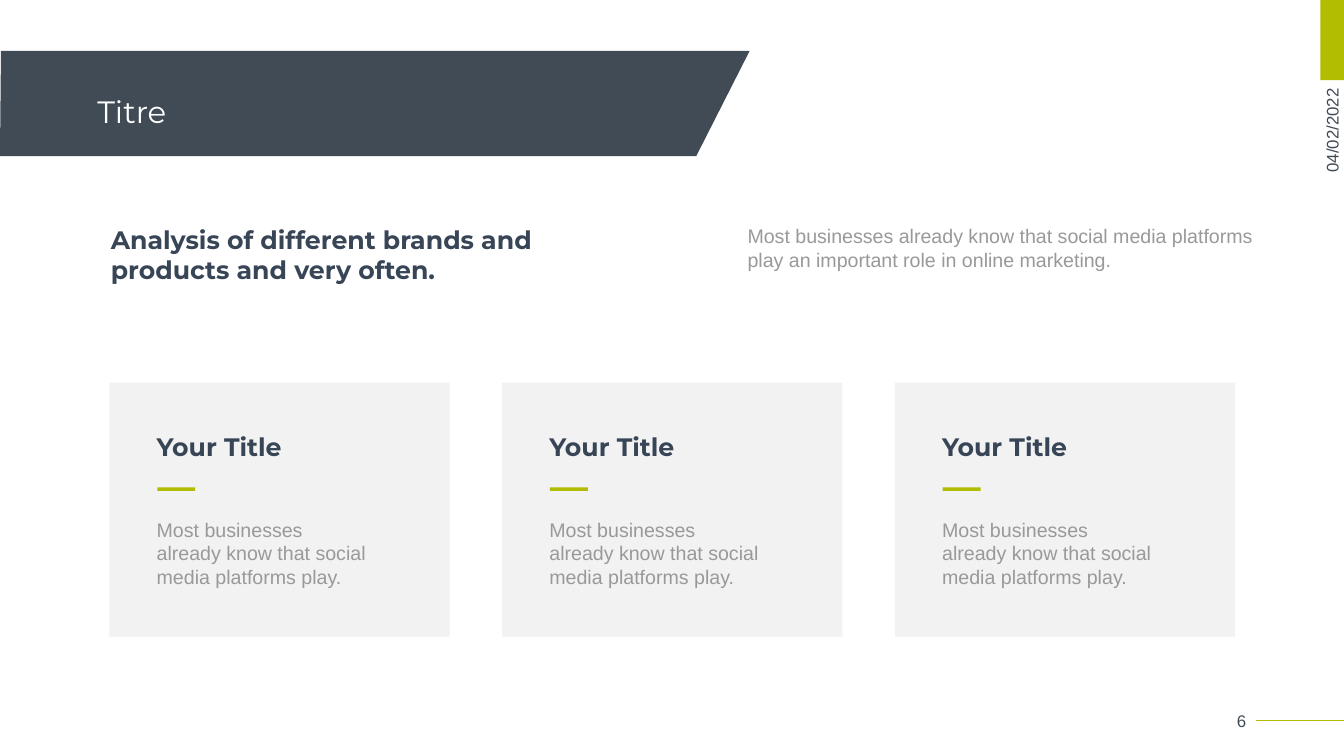
from dataclasses import dataclass

from lxml import etree
from pptx import Presentation
from pptx.dml.color import RGBColor
from pptx.enum.shapes import MSO_CONNECTOR, MSO_SHAPE
from pptx.enum.text import MSO_ANCHOR, MSO_AUTO_SIZE, PP_ALIGN
from pptx.oxml.ns import qn
from pptx.util import Inches, Pt


@dataclass(frozen=True)
class Style:
    font: str
    size: int
    color: RGBColor
    bold: bool = False


@dataclass(frozen=True)
class Theme:
    slate: RGBColor = RGBColor(0x41, 0x4B, 0x56)
    lime: RGBColor = RGBColor(0xB2, 0xBC, 0x00)
    panel: RGBColor = RGBColor(0xF2, 0xF2, 0xF2)
    title: Style = Style("Montserrat", 44, RGBColor(0xFF, 0xFF, 0xFF))
    heading: Style = Style("Montserrat", 36, RGBColor(0x37, 0x45, 0x56), True)
    body: Style = Style("Arial", 28, RGBColor(0x99, 0x99, 0x99))
    footer: Style = Style("Arial", 24, RGBColor(0x41, 0x4B, 0x56))


THEME = Theme()
CARD_COUNT = 3
CARD_LEFT, CARD_TOP, CARD_WIDTH, CARD_HEIGHT = 2.17, 7.59, 6.75, 5.04
CARD_GAP = 1.04


def write(frame, text, style, align=PP_ALIGN.LEFT):
    frame.text = text
    paragraph = frame.paragraphs[0]
    paragraph.alignment = align
    font = paragraph.runs[0].font
    font.name, font.size, font.bold = style.font, Pt(style.size), style.bold
    font.color.rgb = style.color


def add_label(shapes, box, text, style, align=PP_ALIGN.LEFT, anchor=MSO_ANCHOR.TOP):
    label = shapes.add_textbox(*map(Inches, box))
    frame = label.text_frame
    frame.word_wrap = True
    frame.vertical_anchor = anchor
    if anchor == MSO_ANCHOR.TOP:
        frame.auto_size = MSO_AUTO_SIZE.SHAPE_TO_FIT_TEXT
    write(frame, text, style, align)
    return label


def paint(shape, color):
    """Give the shape a flat fill, with no outline or shadow."""
    shape.shadow.inherit = False
    shape.fill.solid()
    shape.fill.fore_color.rgb = color
    shape.line.fill.background()


def add_block(shapes, box, color, preset=MSO_SHAPE.RECTANGLE):
    block = shapes.add_shape(preset, *map(Inches, box))
    paint(block, color)
    return block


def add_banner_title(slide, text):
    outline = slide.shapes.build_freeform(Inches(13.81), Inches(3.1), scale=1.0)
    corners = [(0, 3.1), (0.02, 1.01), (14.87, 1.01)]
    outline.add_line_segments([(Inches(x), Inches(y)) for x, y in corners], close=True)
    banner = outline.convert_to_shape()
    paint(banner, THEME.slate)

    title = slide.shapes.title
    title.left, title.top = Inches(1.83), Inches(0.8)
    title.width, title.height = Inches(22.99), Inches(2.9)
    write(title.text_frame, text, THEME.title)
    title.text_frame.vertical_anchor = MSO_ANCHOR.MIDDLE
    title.text_frame.paragraphs[0].line_spacing = 0.9
    title.element.addprevious(banner.element)  # the banner lies behind the title


def add_margin_marks(shapes, date, number):
    """Add the date and page number with their lime accents."""
    rule = shapes.add_connector(
        MSO_CONNECTOR.STRAIGHT, Inches(24.91), Inches(14.3), Inches(26.66), Inches(14.3)
    )
    rule.line.color.rgb = THEME.lime
    rule.line.width = Pt(1.5)
    etree.SubElement(rule.element.spPr, qn("a:effectLst"))

    date_label = add_label(shapes, (25.42, 2.19, 2, 0.8), date, THEME.footer,
                           PP_ALIGN.CENTER, MSO_ANCHOR.MIDDLE)
    date_label.rotation = 270
    add_block(shapes, (26.19, 0, 0.47, 1.59), THEME.lime)
    add_label(shapes, (22.19, 13.9, 2.63, 0.8), number, THEME.footer,
              PP_ALIGN.RIGHT, MSO_ANCHOR.MIDDLE)


def add_intro(shapes, heading, body):
    intro = shapes.add_group_shape().shapes
    add_label(intro, (14.73, 4.4, 10.42, 1.04), body, THEME.body)
    add_label(intro, (2.1, 4.4, 10.42, 1.31), heading, THEME.heading)


def add_card(shapes, left, heading, body):
    add_block(shapes, (left, CARD_TOP, CARD_WIDTH, CARD_HEIGHT), THEME.panel)
    copy_left = left + 0.84
    card_copy = shapes.add_group_shape().shapes
    add_label(card_copy, (copy_left, 10.22, 4.37, 1.51), body, THEME.body)
    add_label(card_copy, (copy_left, 8.5, 3.57, 0.71), heading, THEME.heading)
    dash = add_block(shapes, (left + 0.95, 9.67, 0.75, 0.07), THEME.lime,
                     MSO_SHAPE.ROUNDED_RECTANGLE)
    dash.adjustments[0] = 0


def main():
    deck = Presentation()
    deck.slide_width, deck.slide_height = Inches(26.66), Inches(15)
    title_only = deck.slide_layouts[5]
    slide = deck.slides.add_slide(title_only)

    add_banner_title(slide, "Titre")
    add_margin_marks(slide.shapes, "04/02/2022", "6")
    add_intro(
        slide.shapes,
        "Analysis of different brands and products and very often.",
        "Most businesses already know that social media platforms "
        "play an important role in online marketing.",
    )
    for column in range(CARD_COUNT):
        left = CARD_LEFT + column * (CARD_WIDTH + CARD_GAP)
        add_card(slide.shapes, left, "Your Title",
                 "Most businesses already know that social media platforms play.")
    deck.save("out.pptx")


if __name__ == "__main__":
    main()
